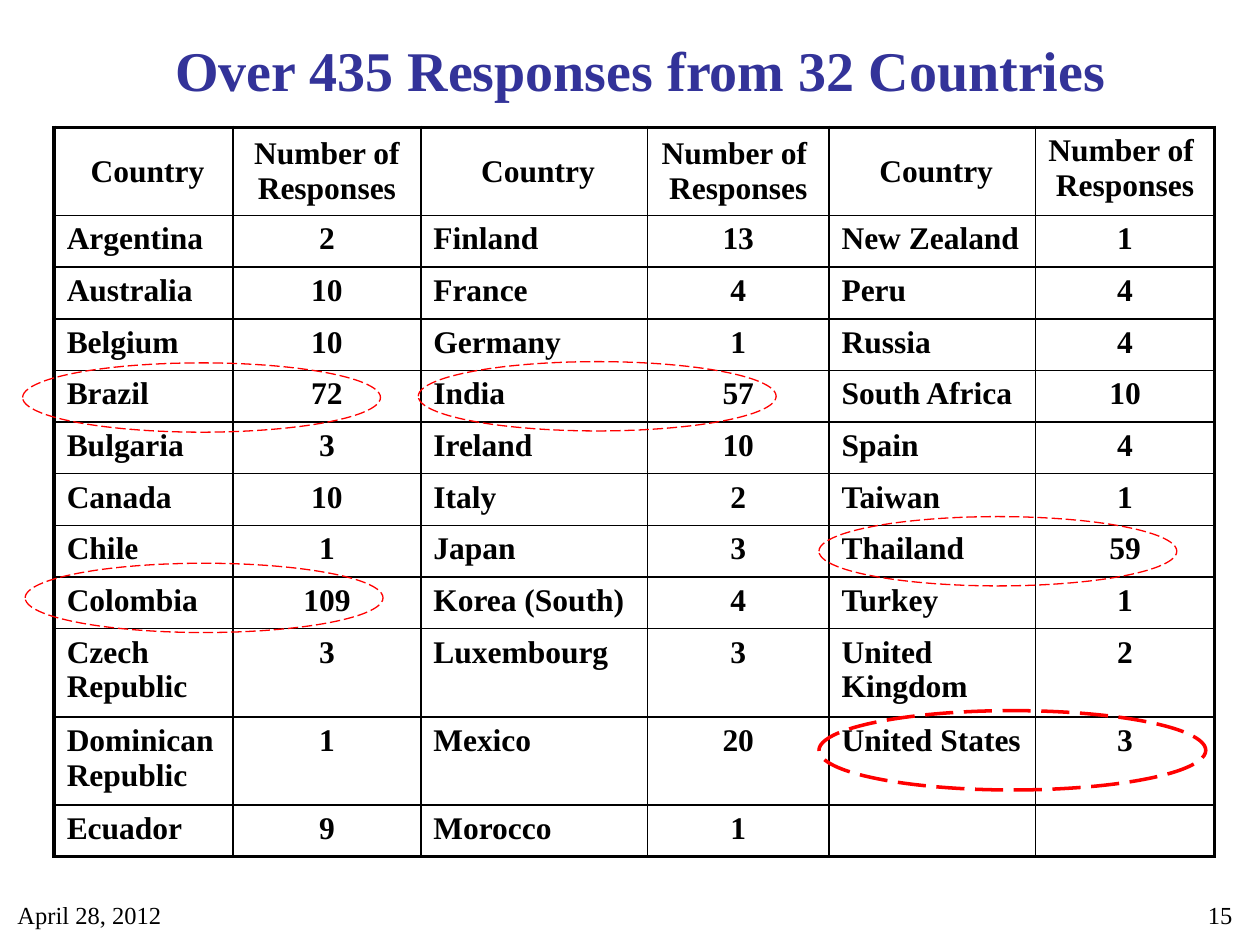
"""Build a slide with a table of survey responses by country."""
import pptx
import pptx.dml.color
import pptx.enum.dml
import pptx.enum.shapes
import pptx.enum.text
import pptx.oxml
import pptx.oxml.ns
import pptx.util
from pptx.util import Inches

BLACK = pptx.dml.color.RGBColor(0x00, 0x00, 0x00)
WHITE = pptx.dml.color.RGBColor(0xFF, 0xFF, 0xFF)
NAVY = pptx.dml.color.RGBColor(0x33, 0x33, 0x99)
RED = pptx.dml.color.RGBColor(0xFF, 0x00, 0x00)
FONT = "Times New Roman"
ALIGN = pptx.enum.text.PP_ALIGN
ANCHOR = pptx.enum.text.MSO_ANCHOR

TITLE = "Over 435 Responses from 32 Countries"
DATE = "April 28, 2012"
PAGE_NUMBER = "15"
HEADER = (" Country", "Number of\nResponses", " Country",
          "Number of \nResponses", " Country", "Number of \nResponses")
RESPONSES = [
    ("Argentina", "2", "Finland", "13", "New Zealand", "1"),
    ("Australia", "10", "France", "4", "Peru", "4"),
    ("Belgium", "10", "Germany", "1", "Russia", "4"),
    ("Brazil", "72", "India", "57", "South Africa", "10"),
    ("Bulgaria", "3", "Ireland", "10", "Spain", "4"),
    ("Canada", "10", "Italy", "2", "Taiwan", "1"),
    ("Chile", "1", "Japan", "3", "Thailand", "59"),
    ("Colombia", "109", "Korea (South)", "4", "Turkey", "1"),
    ("Czech Republic", "3", "Luxembourg", "3", "United Kingdom", "2"),
    ("Dominican Republic", "1", "Mexico", "20", "United States", "3"),
    ("Ecuador", "9", "Morocco", "1", "", ""),
]
COLUMN_WIDTHS = (1.42, 1.49, 1.8, 1.44, 1.64, 1.42)
HEADER_HEIGHT, ROW_HEIGHT = 0.7, 0.41
THIN, THICK = 1, 2.25
HIGHLIGHTS = [
    (3.32, 2.87, 2.84, 0.55, 0.75),
    (0.18, 2.88, 2.84, 0.55, 0.75),
    (6.5, 4.1, 2.84, 0.55, 0.75),
    (0.2, 4.47, 2.84, 0.55, 0.75),
    (6.5, 5.64, 3.07, 0.63, 2),
]


def write(frame, text, size, align, color=BLACK, bold=False):
    frame.text = text
    for paragraph in frame.paragraphs:
        paragraph.alignment = align
        font = paragraph.font
        font.name, font.size, font.bold = FONT, pptx.util.Pt(size), bold
        font.color.rgb = color


def add_text(page, text, place, size, align, anchor=ANCHOR.TOP, **style):
    box = page.shapes.add_textbox(*map(Inches, place))
    box.text_frame.word_wrap = True
    box.text_frame.vertical_anchor = anchor
    write(box.text_frame, text, size, align, **style)


def set_borders(cell, widths):
    properties = cell._tc.get_or_add_tcPr()
    for index, (side, width) in enumerate(widths.items()):
        properties.insert(index, pptx.oxml.parse_xml(
            f'<a:ln{side} {pptx.oxml.ns.nsdecls("a")} w="{pptx.util.Pt(width)}">'
            f'<a:solidFill><a:srgbClr val="{BLACK}"/></a:solidFill>'
            f'<a:prstDash val="solid"/></a:ln{side}>'))


def add_response_table(page):
    rows = [HEADER] + RESPONSES
    last_row, last_column = len(rows) - 1, len(HEADER) - 1
    height = HEADER_HEIGHT + ROW_HEIGHT * last_row
    table = page.shapes.add_table(
        len(rows), len(HEADER), Inches(0.43), Inches(1.01),
        Inches(sum(COLUMN_WIDTHS)), Inches(height)).table
    table.first_row = table.horz_banding = False
    for column, width in zip(table.columns, COLUMN_WIDTHS):
        column.width = Inches(width)
    for r, values in enumerate(rows):
        table.rows[r].height = Inches(ROW_HEIGHT if r else HEADER_HEIGHT)
        for c, value in enumerate(values):
            cell = table.cell(r, c)
            centered = r == 0 or c % 2 == 1
            write(cell.text_frame, value, 18,
                  ALIGN.CENTER if centered else ALIGN.LEFT, bold=True)
            if r == 0 and c < last_column:
                cell.vertical_anchor = ANCHOR.MIDDLE
            cell.fill.solid()
            cell.fill.fore_color.rgb = WHITE
            set_borders(cell, {
                "L": THICK if c == 0 else THIN,
                "R": THICK if c == last_column else THIN,
                "T": THICK if r == 0 else THIN,
                "B": THICK if r == last_row else THIN,
            })


def add_highlight(page, left, top, width, height, weight):
    ellipse = page.shapes.add_shape(
        pptx.enum.shapes.MSO_SHAPE.OVAL,
        *map(Inches, (left, top, width, height)))
    ellipse.shadow.inherit = False
    ellipse.fill.background()
    ellipse.line.color.rgb = RED
    ellipse.line.width = pptx.util.Pt(weight)
    ellipse.line.dash_style = pptx.enum.dml.MSO_LINE.LONG_DASH


def main():
    deck = pptx.Presentation()
    deck.slide_width, deck.slide_height = Inches(10), Inches(7.5)
    page = deck.slides.add_slide(deck.slide_layouts[6])
    add_text(page, DATE, (0.04, 7.09, 2.33, 0.52), 14, ALIGN.LEFT)
    add_text(page, PAGE_NUMBER, (7.55, 7.09, 2.33, 0.52), 14, ALIGN.RIGHT)
    add_text(page, TITLE, (0.83, 0.17, 8.51, 0.75), 32, ALIGN.CENTER,
             ANCHOR.MIDDLE, color=NAVY, bold=True)
    add_response_table(page)
    for highlight in HIGHLIGHTS:
        add_highlight(page, *highlight)
    deck.save("out.pptx")


if __name__ == "__main__":
    main()
